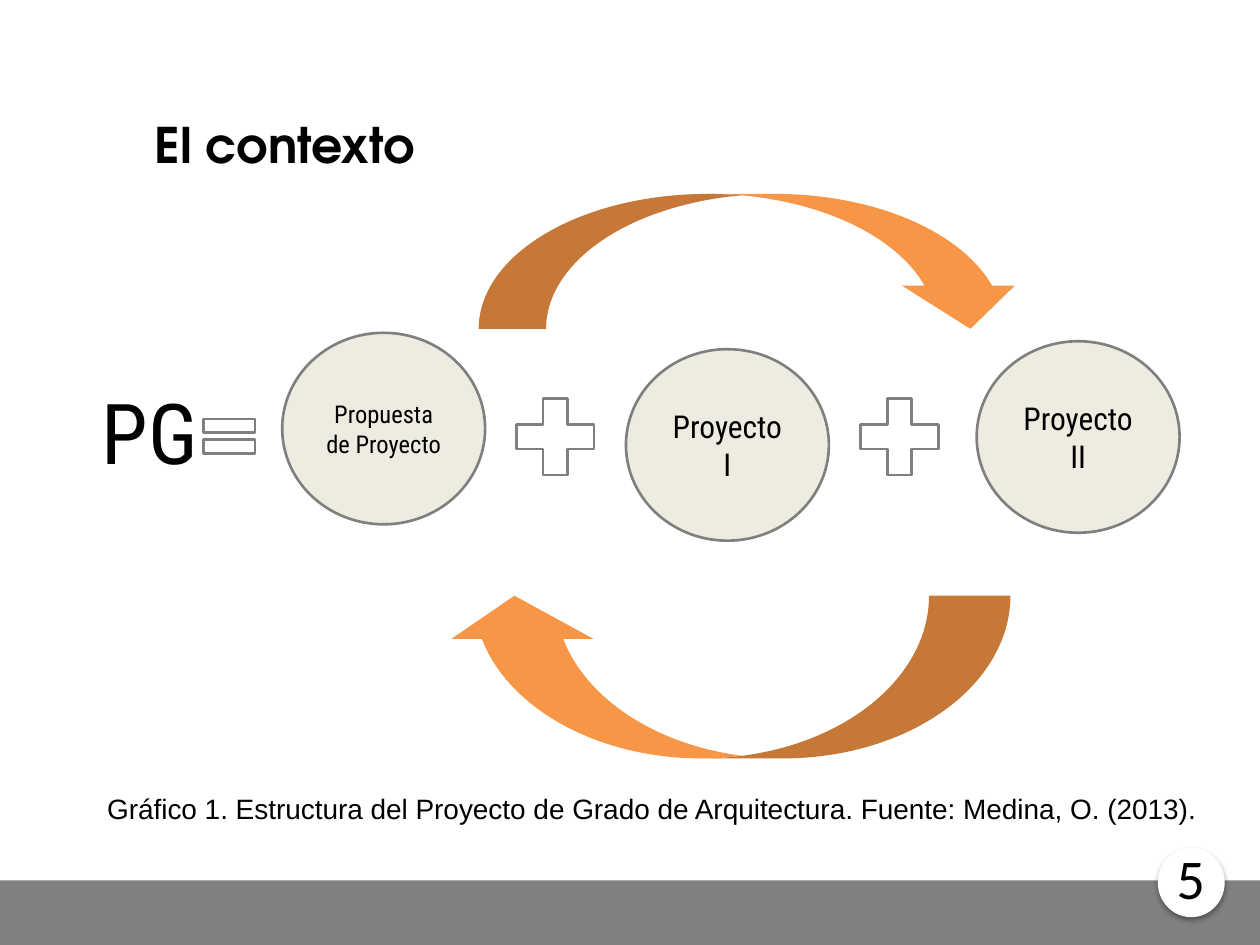
from lxml import etree
from pptx import Presentation
from pptx.dml.color import RGBColor
from pptx.enum.shapes import MSO_SHAPE
from pptx.enum.text import MSO_ANCHOR, PP_ALIGN
from pptx.oxml.ns import qn
from pptx.util import Cm, Pt

RECT, OVAL = MSO_SHAPE.RECTANGLE, MSO_SHAPE.OVAL
NODE = MSO_SHAPE.FLOWCHART_CONNECTOR
PLUS, EQUAL = MSO_SHAPE.MATH_PLUS, MSO_SHAPE.MATH_EQUAL
UP_ARROW, DOWN_ARROW = MSO_SHAPE.CURVED_UP_ARROW, MSO_SHAPE.CURVED_DOWN_ARROW
TOP, MIDDLE = MSO_ANCHOR.TOP, MSO_ANCHOR.MIDDLE
CENTER = PP_ALIGN.CENTER

CONDENSED = "Roboto Condensed"
GRAY, OUTLINE, CREAM, ORANGE = "808080", "7F7F7F", "EEECE1", "F79646"
WHITE, BLACK = "FFFFFF", "000000"


def color(hex_value):
    return RGBColor.from_string(hex_value)


def add_shape(slide, kind, box, fill=None, line=None, adjustments=()):
    """Add a preset shape; box is left, top, width, height in cm."""
    sp = slide.shapes.add_shape(kind, *map(Cm, box))
    sp.shadow.inherit = False
    for i, value in enumerate(adjustments):
        sp.adjustments[i] = value
    if fill:
        sp.fill.solid()
        sp.fill.fore_color.rgb = color(fill)
    else:
        sp.fill.background()
    if line:
        sp.line.color.rgb = color(line)
        sp.line.width = Pt(1.5)
    else:
        sp.line.fill.background()
    return sp


def write(sp, text, size, font, bold=False, wrap=True, anchor=TOP,
          align=None, inset=(0.25, 0.13)):
    """Fill a shape with one paragraph; inset is horizontal, vertical in cm."""
    tf = sp.text_frame
    tf.word_wrap = wrap
    tf.vertical_anchor = anchor
    tf.margin_left = tf.margin_right = Cm(inset[0])
    tf.margin_top = tf.margin_bottom = Cm(inset[1])
    p = tf.paragraphs[0]
    p.text = text
    p.alignment = align
    p.font.size = Pt(size)
    p.font.name = font
    p.font.bold = bold
    p.font.color.rgb = color(BLACK)


def add_text(slide, box, text, size, font, **options):
    write(slide.shapes.add_textbox(*map(Cm, box)), text, size, font, **options)


def add_node(slide, left, top, text, size):
    sp = add_shape(slide, NODE, (left, top, 4.09, 3.86), CREAM, OUTLINE)
    write(sp, text, size, CONDENSED, anchor=MIDDLE, align=CENTER,
          inset=(0.25, 0.25))


def add_soft_shadow(sp):
    effects = sp._element.spPr.find(qn("a:effectLst"))
    shadow = etree.SubElement(effects, qn("a:outerShdw"), blurRad=str(Pt(3.1)),
                              dist=str(Pt(1.8)), dir="5400000", rotWithShape="0")
    tint = etree.SubElement(shadow, qn("a:srgbClr"), val=BLACK)
    etree.SubElement(tint, qn("a:alpha"), val="35000")


def flip_horizontally(sp):
    sp._element.spPr.find(qn("a:xfrm")).set("flipH", "1")


def add_footer(slide):
    add_shape(slide, RECT, (0, 17.75, 25.4, 1.3), GRAY)
    badge = add_shape(slide, OVAL, (23.34, 17.09, 1.35, 1.4), WHITE)
    add_soft_shadow(badge)
    add_text(slide, (23.72, 16.99, 0.56, 1.37), "5", 32, "Calibri",
             wrap=False, anchor=MIDDLE, inset=(0, 0))


def add_equation(slide):
    add_node(slide, 5.69, 6.71, "Propuesta de Proyecto", 14)
    add_node(slide, 19.69, 6.88, "Proyecto II", 18)
    add_node(slide, 12.62, 7.04, "Proyecto I", 18)
    for left in (10.13, 17.07):
        add_shape(slide, PLUS, (left, 7.75, 2.13, 2.11), line=OUTLINE,
                  adjustments=[0.235])
    add_text(slide, (1.8, 7.42, 3.33, 2.72), "PG", 48, CONDENSED,
             inset=(0.25, 0.25))
    add_shape(slide, EQUAL, (3.91, 8.2, 1.42, 1.19), line=OUTLINE,
              adjustments=[0.235, 0.118])


def add_cycle_arrows(slide):
    back = add_shape(slide, UP_ARROW, (8.94, 12.01, 11.43, 3.28), ORANGE,
                     adjustments=[0.5, 0.872, 0.265])
    flip_horizontally(back)
    add_shape(slide, DOWN_ARROW, (9.65, 3.91, 11.05, 2.72), ORANGE,
              adjustments=[0.5, 0.836, 0.32])


def main():
    prs = Presentation()
    prs.slide_width, prs.slide_height = Cm(25.4), Cm(19.05)
    slide = prs.slides.add_slide(prs.slide_layouts[6])
    add_footer(slide)
    add_text(slide, (2.87, 2.18, 5.87, 1.45), "El contexto", 28,
             "TeX Gyre Adventor", bold=True, wrap=False)
    add_equation(slide)
    add_cycle_arrows(slide)
    add_text(slide, (1.91, 15.82, 22.53, 1.63),
             "Gráfico 1. Estructura del Proyecto de Grado de Arquitectura. "
             "Fuente: Medina, O. (2013).", 16, "Arial")
    prs.save("out.pptx")


if __name__ == "__main__":
    main()
